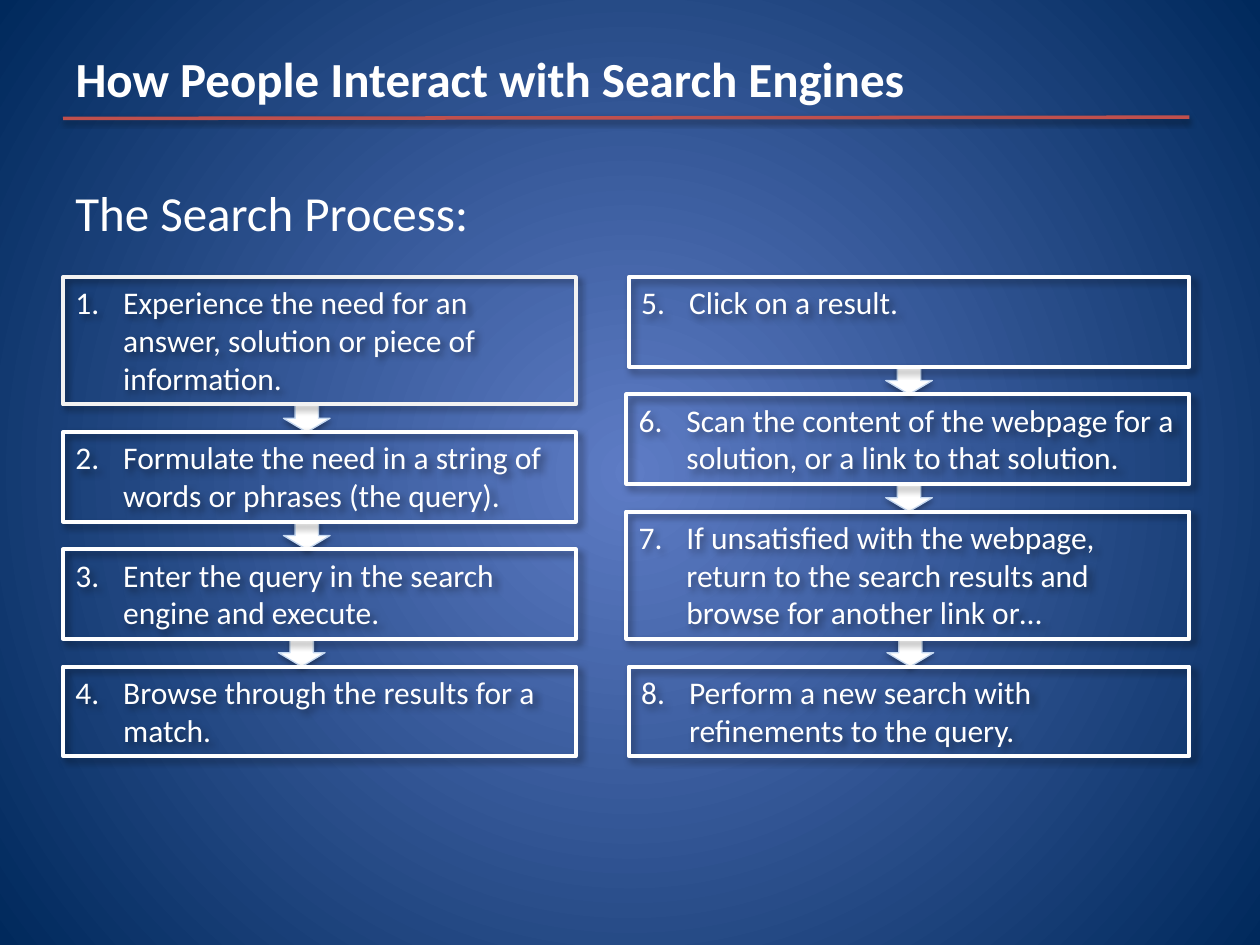
from dataclasses import dataclass

from lxml import etree
from pptx import Presentation
from pptx.dml.color import RGBColor
from pptx.enum.shapes import MSO_CONNECTOR, MSO_SHAPE
from pptx.enum.text import MSO_ANCHOR, PP_ALIGN
from pptx.oxml.ns import qn
from pptx.util import Inches, Pt

RECTANGLE = MSO_SHAPE.RECTANGLE
DOWN_ARROW = MSO_SHAPE.DOWN_ARROW
STRAIGHT = MSO_CONNECTOR.STRAIGHT
TOP, MIDDLE = MSO_ANCHOR.TOP, MSO_ANCHOR.MIDDLE
LEFT = PP_ALIGN.LEFT


@dataclass(frozen=True)
class Shadow:
    opacity: int
    blur: float
    distance: float
    angle: int


@dataclass(frozen=True)
class Theme:
    font: str = "Calibri"
    heading_size: int = 28
    step_size: int = 18
    white: RGBColor = RGBColor(0xFF, 0xFF, 0xFF)
    off_white: RGBColor = RGBColor(0xF2, 0xF2, 0xF2)
    arrow_line: RGBColor = RGBColor(0xC6, 0xD9, 0xF1)
    rule: RGBColor = RGBColor(0xC0, 0x50, 0x4D)
    center: RGBColor = RGBColor(0x5E, 0x7C, 0xC5)
    edge: RGBColor = RGBColor(0x00, 0x29, 0x5C)
    box_shadow: Shadow = Shadow(40, 4, 3, 45)
    arrow_shadow: Shadow = Shadow(35, 3.1, 1.8, 90)
    rule_shadow: Shadow = Shadow(38, 3.1, 1.6, 90)


@dataclass(frozen=True)
class Step:
    text: str
    left: float
    height: float
    arrow_left: float | None = None
    outline: RGBColor = Theme.white


@dataclass(frozen=True)
class Column:
    right: float
    first_number: int
    steps: tuple[Step, ...]


THEME = Theme()
STEPS_TOP, STEP_GAP, ARROW_WIDTH = 2.2, 0.22, 0.37
TWO_LINES, THREE_LINES = 0.71, 1.01
INDENT = Inches(0.38)

COLUMNS = (
    Column(4.57, 1, (
        Step("Experience the need for an answer, solution or piece of information.",
             0.5, THREE_LINES, 2.25, THEME.off_white),
        Step("Formulate the need in a string of words or phrases (the query).",
             0.5, TWO_LINES, 2.25),
        Step("Enter the query in the search engine and execute.", 0.5, TWO_LINES, 2.21),
        Step("Browse through the results for a match.", 0.5, TWO_LINES),
    )),
    Column(9.44, 5, (
        Step("Click on a result.", 4.99, TWO_LINES, 7.03),
        Step("Scan the content of the webpage for a solution, or a link to that solution.",
             4.97, TWO_LINES, 7.03),
        Step("If unsatisfied with the webpage, return to the search results and "
             "browse for another link or…", 4.97, THREE_LINES, 7.04),
        Step("Perform a new search with refinements to the query.", 4.99, TWO_LINES),
    )),
)


def paint_background(page) -> None:
    """Fill the page with a gradient that spreads from its middle."""
    fill = page.background.fill
    fill.gradient()
    for stop, color in zip(fill.gradient_stops, (THEME.center, THEME.edge)):
        stop.color.rgb = color
    for position, stop in zip((0, 1), fill.gradient_stops):
        stop.position = position
    linear = page.element.find(".//" + qn("a:lin"))
    gradient = linear.getparent()
    gradient.remove(linear)
    circle = etree.SubElement(gradient, qn("a:path"), path="circle")
    etree.SubElement(circle, qn("a:fillToRect"),
                     dict.fromkeys("ltrb", "50000"))


def cast_shadow(shape, shadow: Shadow) -> None:
    """Add an outer shadow; call it after the fill and line are set."""
    effects = etree.SubElement(shape.element.spPr, qn("a:effectLst"))
    outer = etree.SubElement(effects, qn("a:outerShdw"), {
        "blurRad": str(Pt(shadow.blur)), "dist": str(Pt(shadow.distance)),
        "dir": str(shadow.angle * 60000), "rotWithShape": "0"})
    color = etree.SubElement(outer, qn("a:srgbClr"), val="000000")
    etree.SubElement(color, qn("a:alpha"), val=str(shadow.opacity * 1000))


def write(shape, text: str, size: int, anchor=TOP, bold: bool = False):
    frame = shape.text_frame
    frame.word_wrap = True
    frame.vertical_anchor = anchor
    frame.text = text
    para = frame.paragraphs[0]
    para.alignment = LEFT
    font = para.runs[0].font
    font.name, font.size, font.bold = THEME.font, Pt(size), bold
    font.color.rgb = THEME.white
    return para


def number(para, value: int) -> None:
    properties = para._p.get_or_add_pPr()
    properties.set("marL", str(INDENT))
    properties.set("indent", str(-INDENT))
    etree.SubElement(properties, qn("a:buFont"), typeface="+mj-lt")
    etree.SubElement(properties, qn("a:buAutoNum"),
                     type="arabicPeriod", startAt=str(value))


def draw_arrow(page, left: float, top: float) -> None:
    arrow = page.shapes.add_shape(DOWN_ARROW, Inches(left), Inches(top),
                                  Inches(ARROW_WIDTH), Inches(STEP_GAP))
    arrow.fill.solid()
    arrow.fill.fore_color.rgb = THEME.white
    arrow.line.color.rgb = THEME.arrow_line
    arrow.line.width = Pt(0.75)
    cast_shadow(arrow, THEME.arrow_shadow)


def draw_step(page, step: Step, top: float, right: float, value: int) -> None:
    box = page.shapes.add_shape(RECTANGLE, Inches(step.left), Inches(top),
                                Inches(right - step.left), Inches(step.height))
    box.fill.background()
    box.line.color.rgb = step.outline
    box.line.width = Pt(2.25)
    cast_shadow(box, THEME.box_shadow)
    number(write(box, step.text, THEME.step_size), value)


def draw_column(page, column: Column) -> None:
    top = STEPS_TOP
    for value, step in enumerate(column.steps, column.first_number):
        if step.arrow_left is not None:
            draw_arrow(page, step.arrow_left, top + step.height)
        draw_step(page, step, top, column.right, value)
        top += step.height + STEP_GAP


def draw_headings(page) -> None:
    title = page.shapes.title
    title.left, title.top = Inches(0.5), Inches(0.3)
    title.width, title.height = Inches(9), Inches(0.63)
    write(title, "How People Interact with Search Engines",
          THEME.heading_size, MIDDLE, bold=True)

    rule = page.shapes.add_connector(STRAIGHT, Inches(0.5), Inches(0.94),
                                     Inches(9.44), Inches(0.93))
    rule.line.color.rgb = THEME.rule
    rule.line.width = Pt(2)
    cast_shadow(rule, THEME.rule_shadow)

    subtitle = page.shapes.add_textbox(Inches(0.5), Inches(1.4),
                                       Inches(3.38), Inches(0.57))
    write(subtitle, "The Search Process:", THEME.heading_size)


def main() -> None:
    deck = Presentation()
    deck.slide_width, deck.slide_height = Inches(10), Inches(7.5)
    page = deck.slides.add_slide(deck.slide_layouts[5])
    paint_background(page)
    draw_headings(page)
    for column in COLUMNS:
        draw_column(page, column)
    deck.save("out.pptx")


if __name__ == "__main__":
    main()
